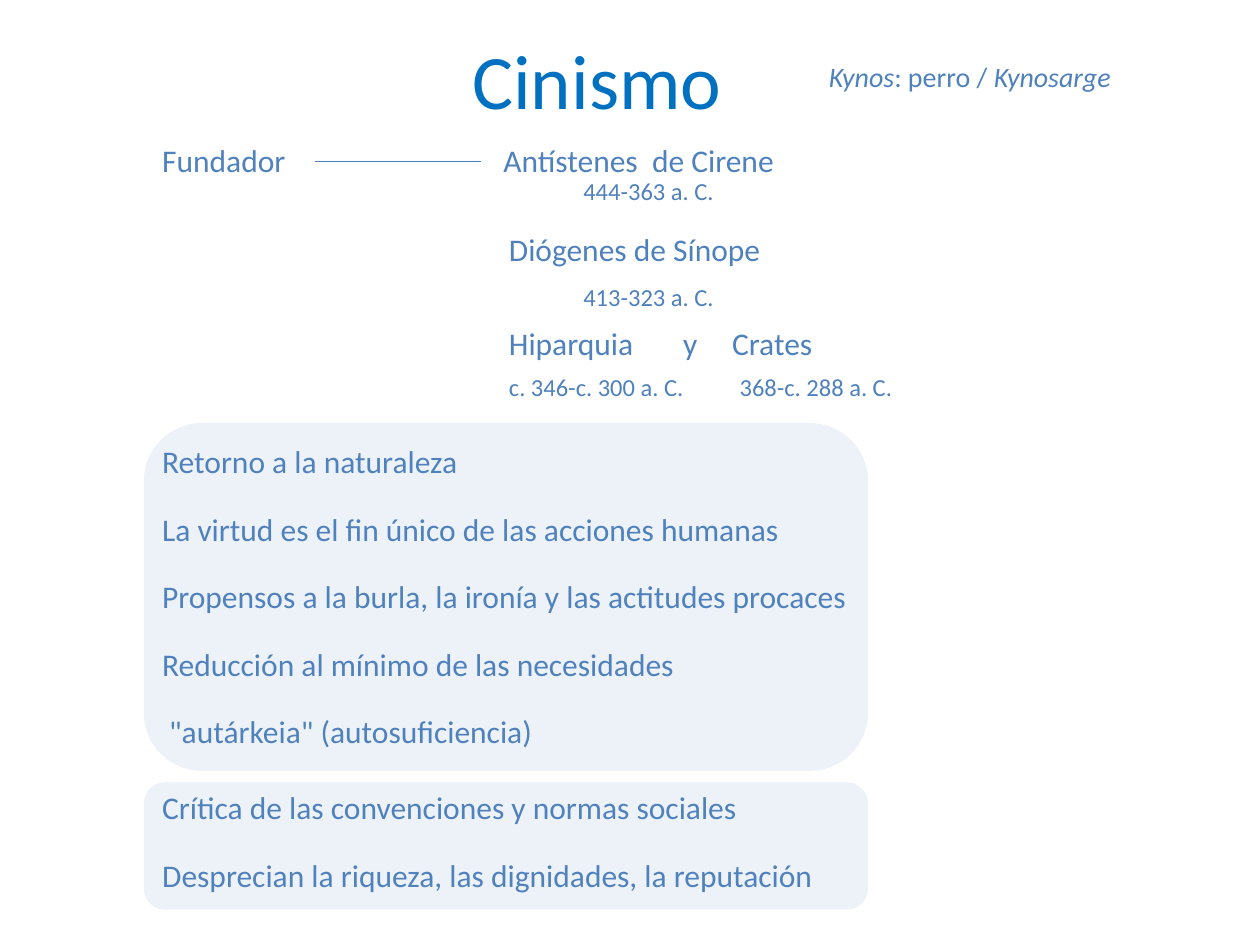
from lxml.etree import SubElement
from pptx import Presentation
from pptx.dml.color import RGBColor
from pptx.enum.shapes import MSO_CONNECTOR as Connector, MSO_SHAPE as Shape
from pptx.enum.text import MSO_ANCHOR as Anchor, MSO_AUTO_SIZE as AutoSize, PP_ALIGN as Align
from pptx.oxml.ns import qn
from pptx.util import Cm, Pt

BLUE, TITLE_BLUE, LINE_BLUE = "4F81BD", "0070C0", "4B7EBC"
FONT = "Calibri"
LEFT, NAMES, DATES = 3.02, 10.01, 11.51  # column edges in cm
NAME_SIZE, DATE_SIZE = 18, 14
ROW_STEP = 1.36

# Content: text, left, top, width, size
PEOPLE = [
    ("Fundador", LEFT, 2.72, 3.02, NAME_SIZE),
    ("Antístenes  de Cirene", 9.9, 2.72, 6.05, NAME_SIZE),
    ("444-363 a. C.", DATES, 3.43, 3.18, DATE_SIZE),
    ("Diógenes de Sínope", NAMES, 4.52, 5.64, NAME_SIZE),
    ("413-323 a. C.", DATES, 5.56, 3.18, DATE_SIZE),
    ("c. 346-c. 300 a. C.", NAMES, 7.37, 4.06, DATE_SIZE),
    ("368-c. 288 a. C.", 14.66, 7.37, 3.61, DATE_SIZE),
]
COUPLE = "Hiparquia\ty\tCrates"
COUPLE_TABS = (3.51, 4.5)
ETYMOLOGY = [("Kynos", True), (": perro / ", False), ("Kynosarge", True)]

# Each panel: top, height, top of first line, lines of (text, indent)
PANELS = [
    (8.53, 7.01, 8.79, [
        ("Retorno a la naturaleza", 0),
        ("La virtud es el fin único de las acciones humanas", 0),
        ("Propensos a la burla, la ironía y las actitudes procaces", 0),
        ("Reducción al mínimo de las necesidades", 0),
        ('"autárkeia" (autosuficiencia)', 0.14),
    ]),
    (15.77, 2.57, 15.77, [
        ("Crítica de las convenciones y normas sociales", 0),
        ("Desprecian la riqueza, las dignidades, la reputación", 0),
    ]),
]
PANEL_LEFT, PANEL_WIDTH = 2.9, 14.6


def color(value):
    return RGBColor.from_string(value)


def add_text(slide, text, left, top, width, height=1.0, size=NAME_SIZE,
             fill=BLUE, align=Align.LEFT, anchor=Anchor.TOP, wrap=False, tabs=()):
    """Add a text box; text is a string or a list of (text, italic) runs."""
    box = slide.shapes.add_textbox(Cm(left), Cm(top), Cm(width), Cm(height))
    frame = box.text_frame
    frame.word_wrap = wrap
    frame.vertical_anchor = anchor
    frame.auto_size = AutoSize.NONE if wrap else AutoSize.SHAPE_TO_FIT_TEXT
    paragraph = frame.paragraphs[0]
    paragraph.alignment = align
    if tabs:
        tab_list = SubElement(paragraph._p.get_or_add_pPr(), qn("a:tabLst"))
        for position in tabs:
            SubElement(tab_list, qn("a:tab"), pos=str(Cm(position)), algn="l")
    for part, italic in [(text, False)] if isinstance(text, str) else text:
        run = paragraph.add_run()
        run.text = part
        run.font.name = FONT
        run.font.size = Pt(size)
        run.font.italic = italic
        run.font.color.rgb = color(fill)


def add_panel(slide, top, height):
    panel = slide.shapes.add_shape(Shape.ROUNDED_RECTANGLE, Cm(PANEL_LEFT), Cm(top),
                                   Cm(PANEL_WIDTH), Cm(height))
    panel.shadow.inherit = False
    panel.fill.solid()
    panel.fill.fore_color.rgb = color(BLUE)
    panel.line.fill.background()
    fill_color = panel._element.spPr.find(qn("a:solidFill"))[0]
    SubElement(fill_color, qn("a:alpha"), val="10000")


def main():
    presentation = Presentation()
    presentation.slide_width, presentation.slide_height = Cm(25.4), Cm(19.05)
    slide = presentation.slides.add_slide(presentation.slide_layouts[6])

    # Title and etymology
    add_text(slide, "Cinismo", 8.15, 0.48, 7.77, height=2.21, size=44, fill=TITLE_BLUE,
             align=Align.CENTER, anchor=Anchor.MIDDLE, wrap=True)
    add_text(slide, ETYMOLOGY, 16.46, 1.07, 6.27, height=0.94, size=16)

    # Philosophers and their dates
    for text, left, top, width, size in PEOPLE:
        add_text(slide, text, left, top, width, size=size,
                 height=1.02 if size == NAME_SIZE else 0.86)
    add_text(slide, COUPLE, NAMES, 6.4, 6.73, tabs=COUPLE_TABS)

    # Line from the label to the founder
    line = slide.shapes.add_connector(Connector.STRAIGHT, Cm(6.35), Cm(3.25), Cm(9.7), Cm(3.25))
    line.line.color.rgb = color(LINE_BLUE)
    line.line.width = Pt(0.75)
    SubElement(line._element.spPr, qn("a:effectLst"))

    # Doctrine panels
    for top, height, first_line, lines in PANELS:
        add_panel(slide, top, height)
        for row, (text, indent) in enumerate(lines):
            add_text(slide, text, LEFT + indent, first_line + row * ROW_STEP, PANEL_WIDTH - 0.12)

    presentation.save("out.pptx")


if __name__ == "__main__":
    main()
